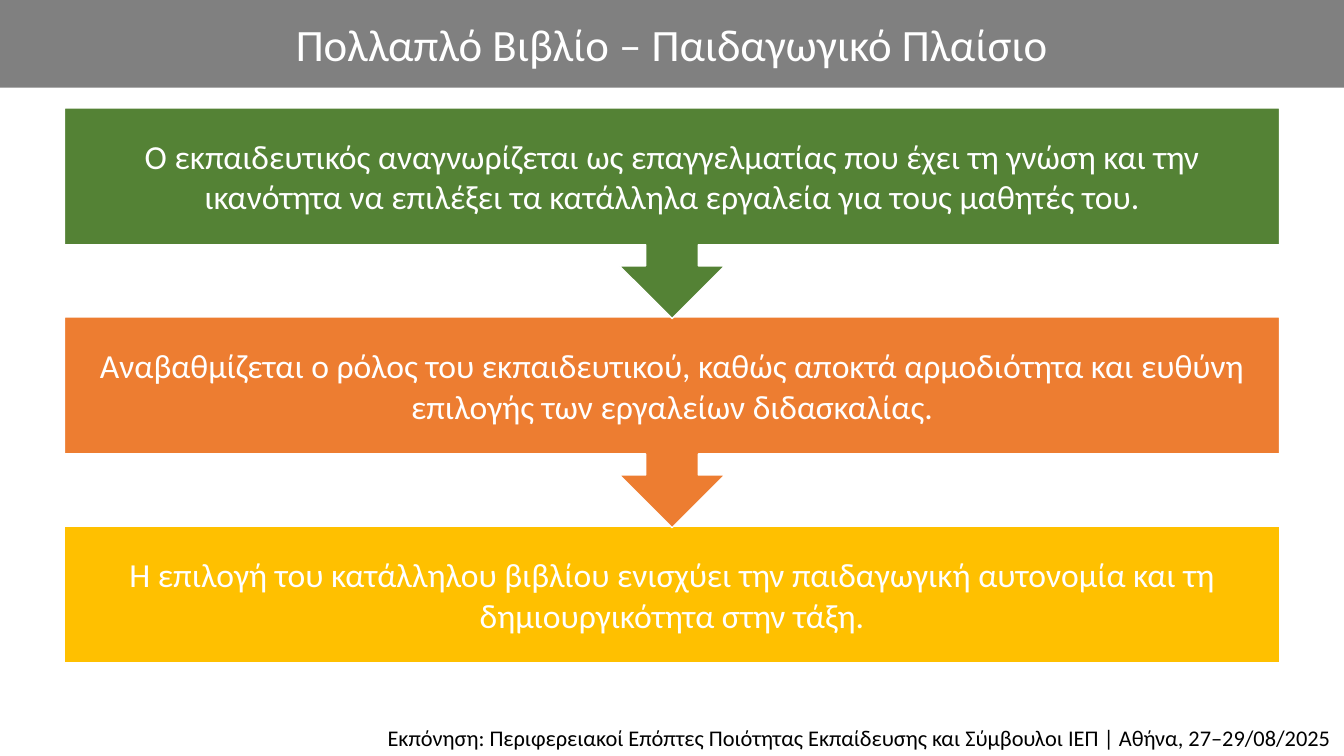
from pptx import Presentation
from pptx.dml.color import RGBColor
from pptx.enum import shapes, text
from pptx.util import Inches, Pt

HUES = {
    "grey": "808080",
    "green": "548235",
    "orange": "ED7D31",
    "gold": "FFC000",
    "white": "FFFFFF",
    "black": "000000",
}
FONT = "Calibri"
KIND = shapes.MSO_SHAPE
ALIGN = text.PP_ALIGN

LEFT, TOP, WIDTH = 0.64, 1.07, 12.05
BOX, CALLOUT = 1.36, 2.09
STEP = 2.075
INSET = 0.19

STEPS = [
    ("green", "Ο εκπαιδευτικός αναγνωρίζεται ως επαγγελματίας που έχει τη γνώση και την "
              "ικανότητα να επιλέξει τα κατάλληλα εργαλεία για τους μαθητές του."),
    ("orange", "Αναβαθμίζεται ο ρόλος του εκπαιδευτικού, καθώς αποκτά αρμοδιότητα και ευθύνη "
               "επιλογής των εργαλείων διδασκαλίας."),
    ("gold", "Η επιλογή του κατάλληλου βιβλίου ενισχύει την παιδαγωγική αυτονομία και τη "
             "δημιουργικότητα στην τάξη."),
]


def color(name):
    return RGBColor.from_string(HUES[name])


def add_block(parent, kind, area, fill, line=None):
    block = parent.add_shape(kind, *map(Inches, area))
    block.shadow.inherit = False
    block.fill.solid()
    block.fill.fore_color.rgb = color(fill)
    if line:
        block.line.color.rgb = color(line)
        block.line.width = Pt(1)
    else:
        block.line.fill.background()
    return block


def write(shape, words, size, hue="white", align=ALIGN.CENTER,
          anchor=text.MSO_ANCHOR.MIDDLE):
    """Put one line of styled text in the shape and return its paragraph."""
    frame = shape.text_frame
    frame.word_wrap = True
    frame.vertical_anchor = anchor
    para = frame.paragraphs[0]
    para.alignment = align
    run = para.add_run()
    run.text = words
    run.font.name = FONT
    run.font.size = Pt(size)
    run.font.color.rgb = color(hue)
    return para


def add_step(group, top, fill, words, last):
    """Add a box with its text; all but the last point down to the next."""
    if last:
        add_block(group, KIND.RECTANGLE, (LEFT, top, WIDTH, BOX), fill, "white")
    else:
        area = (LEFT, top, WIDTH, CALLOUT)
        arrow = add_block(group, KIND.UP_ARROW_CALLOUT, area, fill, "white")
        arrow.rotation = 180
    label = group.add_textbox(*map(Inches, (LEFT, top, WIDTH, BOX)))
    para = write(label, words, 24)
    para.space_before = para.space_after = Pt(6)
    frame = label.text_frame
    frame.margin_left = frame.margin_right = Inches(INSET)
    frame.margin_top = frame.margin_bottom = Inches(INSET)


def main():
    deck = Presentation()
    deck.slide_width, deck.slide_height = Inches(13.33), Inches(7.5)
    slide = deck.slides.add_slide(deck.slide_layouts[6])

    title = add_block(slide.shapes, KIND.RECTANGLE, (0, 0, 13.33, 0.87), "grey")
    write(title, "Πολλαπλό Βιβλίο – Παιδαγωγικό Πλαίσιο", 32)

    flow = slide.shapes.add_group_shape().shapes
    final = len(STEPS) - 1
    # Lowest box first, so that each arrow tip lies over the next box.
    for row in range(final, -1, -1):
        fill, words = STEPS[row]
        add_step(flow, TOP + row * STEP, fill, words, row == final)

    footer = add_block(slide.shapes, KIND.RECTANGLE, (0.03, 7.11, 13.27, 0.39), "white")
    credit = write(footer, "Εκπόνηση: Περιφερειακοί Επόπτες Ποιότητας Εκπαίδευσης και "
                   "Σύμβουλοι ΙΕΠ | Αθήνα, 27–29/08/2025", 16, "black",
                   ALIGN.RIGHT, text.MSO_ANCHOR.TOP)
    credit.line_spacing = 1.1

    deck.save("out.pptx")


if __name__ == "__main__":
    main()
